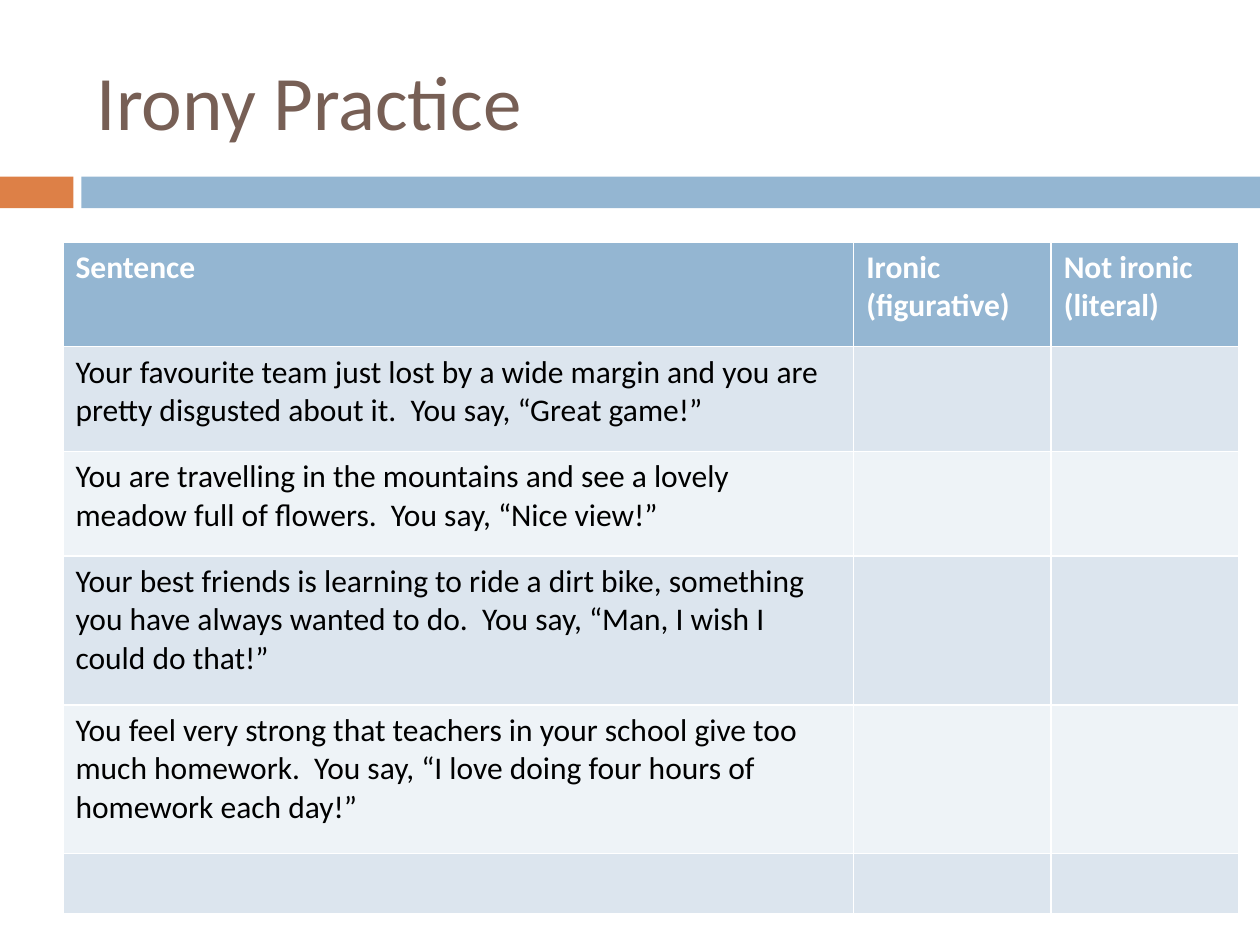
from pptx import Presentation
from pptx.dml.color import RGBColor
from pptx.enum.shapes import MSO_SHAPE
from pptx.enum.text import MSO_ANCHOR
from pptx.util import Cm, Pt

TITLE = "Irony Practice"
HEADERS = ["Sentence", "Ironic (figurative)", "Not ironic (literal)"]
SENTENCES = [
    "Your favourite team just lost by a wide margin and you are pretty "
    "disgusted about it.  You say, “Great game!”",
    "You are travelling in the mountains and see a lovely meadow full of "
    "flowers.  You say, “Nice view!”",
    "Your best friends is learning to ride a dirt bike, something you have "
    "always wanted to do.  You say, “Man, I wish I could do that!”",
    "You feel very strong that teachers in your school give too much "
    "homework.  You say, “I love doing four hours of homework each day!”",
    "",
]
BLUE, ORANGE, BROWN = "94B6D2", "DD8047", "775F55"
BANDS = ["DCE5EE", "EEF3F7"]
BARS = [(0, 1.48, ORANGE), (1.64, 23.76, BLUE)]
COL_WIDTHS = [15.94, 3.98, 3.78]
ROW_HEIGHTS = [2.11, 2.11, 2.11, 3, 3, 1.21]


def rgb(color):
    """Turn a hex string into a colour."""
    return RGBColor.from_string(color)


def style(p, size, color, bold=False):
    """Format every run of a paragraph."""
    for r in p.runs:
        r.font.name = "Calibri"
        r.font.size = Pt(size)
        r.font.bold = bold
        r.font.color.rgb = rgb(color)


def add_bar(s, left, width, color):
    """Draw one part of the divider under the title."""
    sp = s.shapes.add_shape(MSO_SHAPE.RECTANGLE, Cm(left), Cm(3.56), Cm(width), Cm(0.64))
    sp.shadow.inherit = False
    sp.fill.solid()
    sp.fill.fore_color.rgb = rgb(color)
    sp.line.fill.background()


def add_title(s):
    """Place the slide title."""
    tf = s.shapes.add_textbox(Cm(1.7), Cm(0.64), Cm(22.66), Cm(2.74)).text_frame
    tf.word_wrap = True
    tf.vertical_anchor = MSO_ANCHOR.MIDDLE
    tf.text = TITLE
    style(tf.paragraphs[0], 44, BROWN)


def add_worksheet(s):
    """Build the table of sentences with empty answer columns."""
    rows = [HEADERS] + [[sentence, "", ""] for sentence in SENTENCES]
    table = s.shapes.add_table(
        len(rows), len(HEADERS), Cm(1.27), Cm(4.88),
        Cm(sum(COL_WIDTHS)), Cm(sum(ROW_HEIGHTS))).table
    for col, width in zip(table.columns, COL_WIDTHS):
        col.width = Cm(width)
    for i, (row, height, texts) in enumerate(zip(table.rows, ROW_HEIGHTS, rows)):
        row.height = Cm(height)
        header = i == 0
        for cell, text in zip(row.cells, texts):
            cell.fill.solid()
            cell.fill.fore_color.rgb = rgb(BLUE if header else BANDS[(i - 1) % 2])
            cell.text = text
            style(cell.text_frame.paragraphs[0], 18, "FFFFFF" if header else "000000", header)


def main():
    """Build and save the slide."""
    prs = Presentation()
    prs.slide_width, prs.slide_height = Cm(25.4), Cm(19.05)
    s = prs.slides.add_slide(prs.slide_layouts[6])
    for bar in BARS:
        add_bar(s, *bar)
    add_title(s)
    add_worksheet(s)
    prs.save("out.pptx")


if __name__ == "__main__":
    main()
